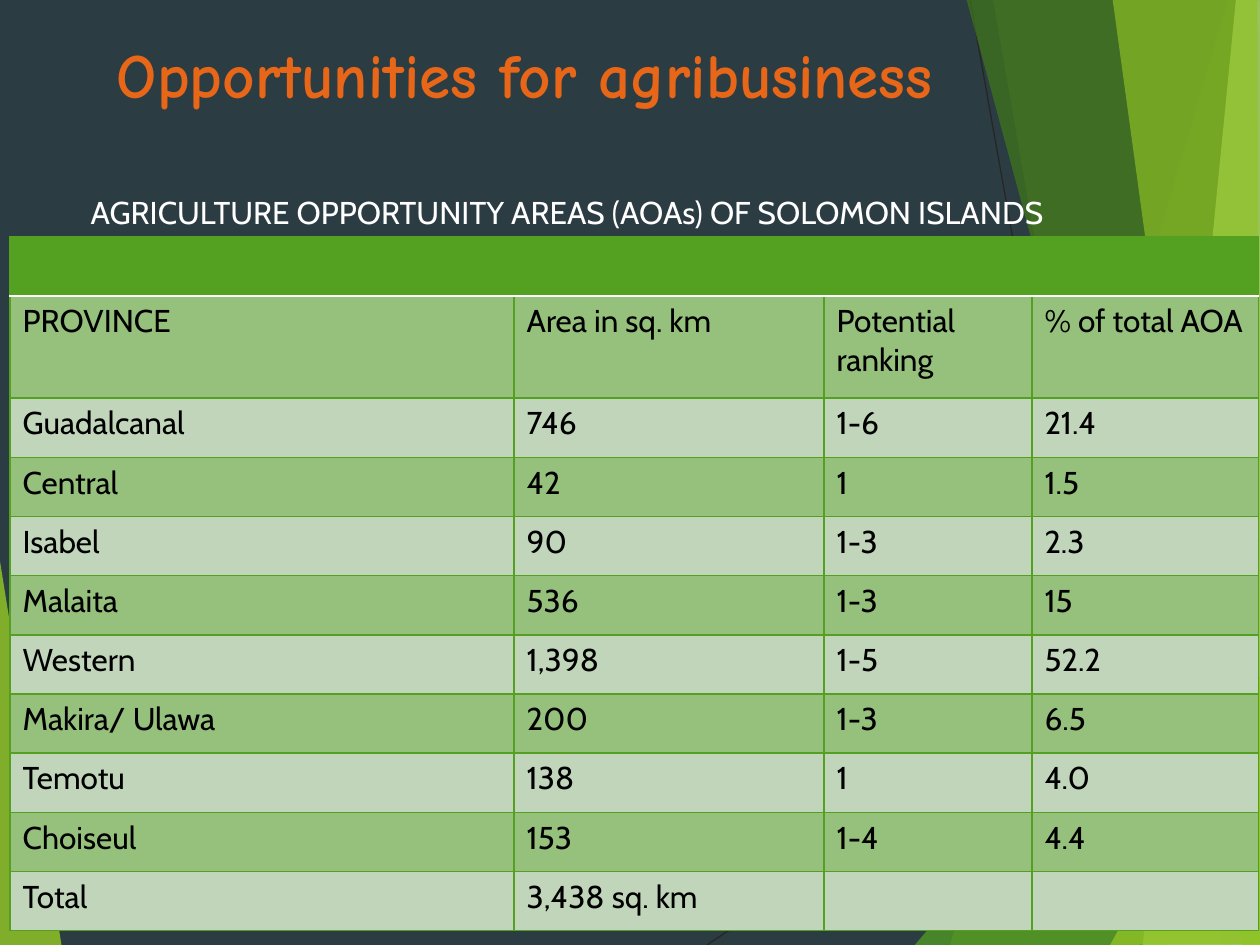
from lxml import etree
from pptx import Presentation
from pptx.dml.color import RGBColor
from pptx.enum.shapes import MSO_CONNECTOR
from pptx.enum.text import MSO_ANCHOR
from pptx.oxml import parse_xml
from pptx.oxml.ns import nsdecls, qn
from pptx.util import Inches, Pt

STRAIGHT = MSO_CONNECTOR.STRAIGHT
MIDDLE = MSO_ANCHOR.MIDDLE
TOP = MSO_ANCHOR.TOP

LIME, GREEN, WHITE = "90C226", "54A021", "FFFFFF"

# Each facet: corner points in inches, colour, opacity in percent
FACETS = [
    ([(-0.01, 4.39), (0.49, 7.51), (-0.01, 7.5)], LIME, 85),
    ([(9.75, 0), (7.54, 7.5), (10.02, 7.51), (10.01, 0.01)], LIME, 30),
    ([(7.88, -0.01), (9.19, 7.5), (10.01, 7.5), (10.01, -0.01)], LIME, 20),
    ([(7.26, 7.5), (10, 4.29), (10.01, 7.5)], GREEN, 72),
    ([(7.67, -0.01), (9.7, 7.5), (10.01, 7.49), (10.01, -0.01)], "3F7819", 70),
    ([(9.81, -0.01), (9.07, 7.5), (10.01, 7.5), (10, -0.01)], "C0E474", 70),
    ([(8.83, -0.01), (9.86, 7.5), (10, 7.5), (9.98, -0.01)], LIME, 65),
    ([(8.81, 7.5), (10.01, 5.35), (10.01, 7.49)], LIME, 80),
]

AREAS = [
    ("", "", "", ""),
    ("PROVINCE", "Area in sq. km", "Potential ranking", "% of total AOA"),
    ("Guadalcanal", "746", "1-6", "21.4"),
    ("Central", "42", "1", "1.5"),
    ("Isabel", "90", "1-3", "2.3"),
    ("Malaita", "536", "1-3", "15"),
    ("Western", "1,398", "1-5", "52.2"),
    ("Makira/ Ulawa", "200", "1-3", "6.5"),
    ("Temotu", "138", "1", "4.0"),
    ("Choiseul", "153", "1-4", "4.4"),
    ("Total", "3,438 sq. km", "", ""),
]
COLUMN_WIDTHS = [4, 2.46, 1.65, 1.8]
ROW_HEIGHTS = [0.47, 0.81] + [0.47] * 9


def colour(hex_code):
    return RGBColor.from_string(hex_code)


class SlideBuilder:
    body_font = "Cabin"
    body_size = 18
    bands = ("C1D5BA", "95C17C")

    def __init__(self, page):
        self.page = page

    def background(self, hex_code):
        fill = self.page.background.fill
        fill.solid()
        fill.fore_color.rgb = colour(hex_code)

    def line(self, start, end, hex_code, width):
        points = [Inches(value) for value in (*start, *end)]
        connector = self.page.shapes.add_connector(STRAIGHT, *points)
        connector.line.color.rgb = colour(hex_code)
        connector.line.width = Pt(width)
        etree.SubElement(connector._element.spPr, qn("a:effectLst"))

    def facet(self, corners, hex_code, opacity):
        """Draw a translucent polygon without outline."""
        first, *rest = [(Inches(x), Inches(y)) for x, y in corners]
        builder = self.page.shapes.build_freeform(*first)
        builder.add_line_segments(rest, close=True)
        shape = builder.convert_to_shape()
        shape.shadow.inherit = False
        shape.line.fill.background()
        shape.fill.solid()
        shape.fill.fore_color.rgb = colour(hex_code)
        tint = shape._element.spPr.find(".//" + qn("a:srgbClr"))
        etree.SubElement(tint, qn("a:alpha"), val=str(opacity * 1000))

    def format_text(self, frame, hex_code, font=None, size=None, bold=False):
        for para in frame.paragraphs:
            para.font.size = Pt(size or self.body_size)
            for span in para.runs:
                span.font.name = font or self.body_font
                span.font.size = Pt(size or self.body_size)
                span.font.bold = bold
                span.font.color.rgb = colour(hex_code)

    def text(self, text, area, hex_code, anchor=TOP, **style):
        box = self.page.shapes.add_textbox(*[Inches(value) for value in area])
        frame = box.text_frame
        frame.word_wrap = True
        frame.vertical_anchor = anchor
        frame.text = text
        self.format_text(frame, hex_code, **style)

    def borders(self, cell, **special):
        """Give a cell green edges; special maps an edge to (colour, width)."""
        properties = cell._tc.get_or_add_tcPr()
        for index, edge in enumerate("LRTB"):
            hex_code, width = special.get(edge, (GREEN, 1))
            properties.insert(index, parse_xml(
                f'<a:ln{edge} {nsdecls("a")} w="{Pt(width)}"><a:solidFill>'
                f'<a:srgbClr val="{hex_code}"/></a:solidFill></a:ln{edge}>'))

    def table(self, rows, left, top, widths, heights):
        table = self.page.shapes.add_table(
            len(rows), len(widths), Inches(left), Inches(top),
            Inches(sum(widths)), Inches(sum(heights))).table
        for column, width in zip(table.columns, widths):
            column.width = Inches(width)
        rule = (WHITE, 1.5)
        special_edges = {0: {"B": rule}, 1: {"T": rule}}
        for index, values in enumerate(rows):
            table.rows[index].height = Inches(heights[index])
            for cell, value in zip(table.rows[index].cells, values):
                cell.text_frame.text = value
                self.format_text(cell.text_frame, "000000")
                cell.fill.solid()
                cell.fill.fore_color.rgb = colour(self.bands[index % 2] if index else GREEN)
                self.borders(cell, **special_edges.get(index, {}))


def main():
    deck = Presentation()
    deck.slide_width, deck.slide_height = Inches(10), Inches(7.5)
    slide = SlideBuilder(deck.slides.add_slide(deck.slide_layouts[6]))

    slide.background("2C3C43")
    slide.line((5.61, 7.5), (10.01, 4.57), "262626", 0.75)
    slide.line((7.7, 0), (9.04, 7.5), "262626", 0.75)
    for corners, hex_code, opacity in FACETS:
        slide.facet(corners, hex_code, opacity)

    slide.text("Opportunities for agribusiness", (0.83, 0.17, 6.94, 0.83), "E76618",
               anchor=MIDDLE, font="Comic Neue", size=36, bold=True)
    slide.table(AREAS, 0.08, 1.88, COLUMN_WIDTHS, ROW_HEIGHTS)
    slide.text("AGRICULTURE OPPORTUNITY AREAS (AOAs) OF SOLOMON ISLANDS",
               (0.62, 1.48, 8.42, 0.4), WHITE)
    deck.save("out.pptx")


if __name__ == "__main__":
    main()
